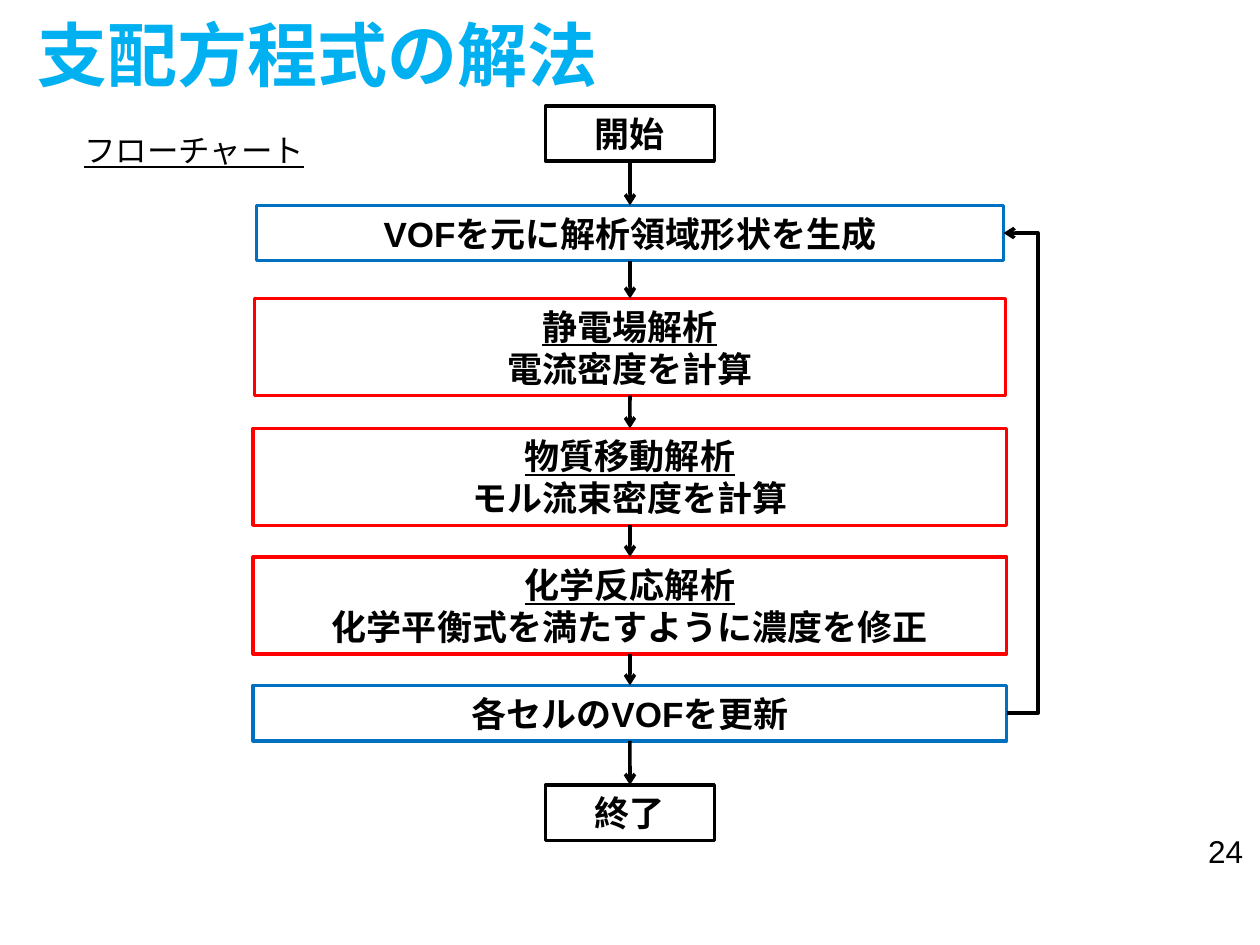
"""Build the flowchart slide on solving the governing equations."""
import pptx
import pptx.dml.color
import pptx.enum.shapes
import pptx.enum.text
import pptx.oxml
import pptx.oxml.ns
import pptx.util
from pptx.util import Inches

SLIDE_W = 10
BLACK, BLUE, RED, CYAN, WHITE = "000000", "0070C0", "FF0000", "00B0F0", "FFFFFF"
STEPS = [
    (0.84, 1.34, 0.44, BLACK, ["開始"]),
    (1.63, 5.93, 0.44, BLUE, ["VOFを元に解析領域形状を生成"]),
    (2.37, 5.96, 0.77, RED, ["静電場解析", "電流密度を計算"]),
    (3.4, 5.98, 0.77, RED, ["物質移動解析", "モル流束密度を計算"]),
    (4.42, 5.98, 0.77, RED, ["化学反応解析", "化学平衡式を満たすように濃度を修正"]),
    (5.44, 5.98, 0.44, BLUE, ["各セルのVOFを更新"]),
    (6.23, 1.34, 0.44, BLACK, ["終了"]),
]


def rgb(value):
    """Return the colour for a hex string."""
    return pptx.dml.color.RGBColor.from_string(value)


def set_font(p, size, color=BLACK, bold=False, underline=False):
    """Set the font of a paragraph."""
    p.font.name = "Arial"
    p.font.size = pptx.util.Pt(size)
    p.font.color.rgb = rgb(color)
    p.font.bold = bold
    p.font.underline = underline


def add_label(s, left, top, width, height, text, size, wrap=False, **font):
    """Add a single-line text box."""
    tf = s.shapes.add_textbox(Inches(left), Inches(top), Inches(width), Inches(height)).text_frame
    tf.word_wrap = wrap
    tf.vertical_anchor = pptx.enum.text.MSO_ANCHOR.MIDDLE
    p = tf.paragraphs[0]
    p.text = text
    set_font(p, size, **font)


def add_step(s, top, width, height, color, lines):
    """Add a centred flowchart box, underlining the heading of a two-line step."""
    sp = s.shapes.add_shape(
        pptx.enum.shapes.MSO_SHAPE.RECTANGLE,
        Inches((SLIDE_W - width) / 2), Inches(top), Inches(width), Inches(height))
    sp.shadow.inherit = False
    sp.fill.solid()
    sp.fill.fore_color.rgb = rgb(WHITE)
    sp.line.color.rgb = rgb(color)
    sp.line.width = pptx.util.Pt(2)
    tf = sp.text_frame
    tf.word_wrap = True
    tf.auto_size = pptx.enum.text.MSO_AUTO_SIZE.SHAPE_TO_FIT_TEXT
    tf.text = "\n".join(lines)
    for i, p in enumerate(tf.paragraphs):
        p.alignment = pptx.enum.text.PP_ALIGN.CENTER
        set_font(p, 20, bold=True, underline=i == 0 and len(lines) > 1)
    return sp


def add_arrow(s, kind, start, start_site, end, end_site):
    """Join two boxes with an arrow."""
    cxn = s.shapes.add_connector(kind, 0, 0, 0, 0)
    cxn.begin_connect(start, start_site)
    cxn.end_connect(end, end_site)
    cxn.line.color.rgb = rgb(BLACK)
    cxn.line.width = pptx.util.Pt(2)
    ns = pptx.oxml.ns.nsdecls("a")
    cxn.line._get_or_add_ln().append(pptx.oxml.parse_xml(f'<a:tailEnd {ns} type="arrow"/>'))
    cxn._element.spPr.append(pptx.oxml.parse_xml(f"<a:effectLst {ns}/>"))
    return cxn


def add_loop(s, start, end, reach):
    """Add the return arrow that runs outside the right-hand sides of the boxes."""
    cxn = add_arrow(s, pptx.enum.shapes.MSO_CONNECTOR.ELBOW, start, 3, end, 3)
    bend = round(-100000 * Inches(reach) / cxn.width)
    geom = cxn._element.spPr.find(pptx.oxml.ns.qn("a:prstGeom"))
    for old in list(geom):
        geom.remove(old)
    geom.append(pptx.oxml.parse_xml(
        f'<a:avLst {pptx.oxml.ns.nsdecls("a")}><a:gd name="adj1" fmla="val {bend}"/></a:avLst>'))


def main():
    """Build and save the slide."""
    prs = pptx.Presentation()
    prs.slide_width, prs.slide_height = Inches(SLIDE_W), Inches(7.5)
    s = prs.slides.add_slide(prs.slide_layouts[6])
    add_label(s, 0.2, 0.09, 9.61, 0.67, "支配方程式の解法", 40, wrap=True, color=CYAN, bold=True)
    add_label(s, 0.57, 0.99, 1.97, 0.4, "フローチャート", 18, underline=True)
    add_label(s, 9.49, 6.55, 0.51, 0.4, "24", 18)
    boxes = [add_step(s, *step) for step in STEPS]
    for upper, lower in zip(boxes, boxes[1:]):
        add_arrow(s, pptx.enum.shapes.MSO_CONNECTOR.STRAIGHT, upper, 2, lower, 0)
    add_loop(s, boxes[5], boxes[1], 0.25)
    prs.save("out.pptx")


if __name__ == "__main__":
    main()
